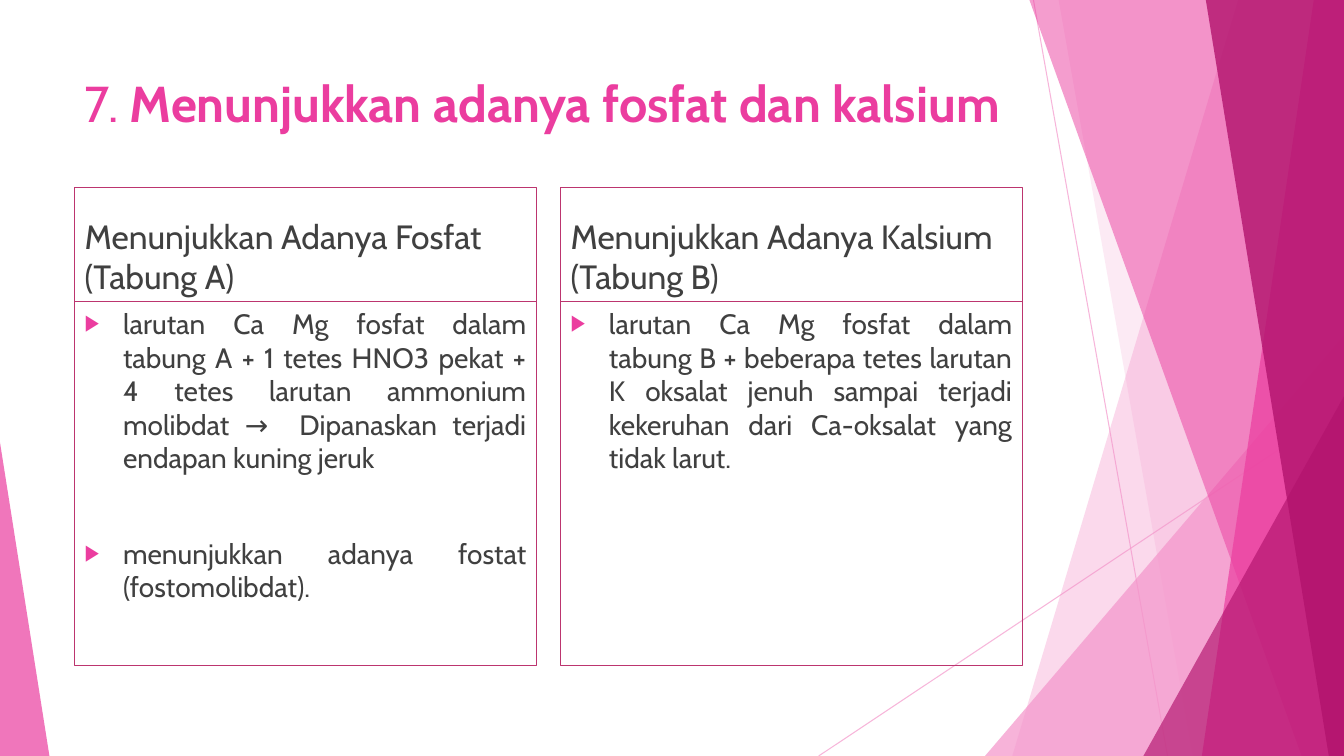
from dataclasses import dataclass

from lxml import etree
from pptx import Presentation
from pptx.dml.color import RGBColor as RGB
from pptx.enum.shapes import MSO_CONNECTOR as Conn, MSO_SHAPE as Shape
from pptx.enum.text import MSO_ANCHOR as Anchor, MSO_AUTO_SIZE as Fit, PP_ALIGN as Align
from pptx.oxml.ns import qn
from pptx.util import Inches, Pt


@dataclass(frozen=True)
class Theme:
    font: str = "Cabin"
    pale: str = "F496CB"
    pink: str = "EB3D9F"
    deep: str = "B2136D"
    edge: str = "BC356F"
    ink: str = "404040"
    title: int = 36
    head: int = 24
    body: int = 20


THEME = Theme()
WIDE, HIGH = 13.33, 7.5

# Slanted bands: top x, bottom x, colour, opacity
BACK = [(12.28, 10.04, THEME.pale, 36), (10.5, 11.83, THEME.pale, 20)]
FRONT = [
    (10.21, 12.91, THEME.pink, 50),
    (13.03, 11.92, THEME.pink, 70),
    (11.96, 13.18, THEME.deep, 80),
]

# Columns: left, heading, items
COLUMNS = [
    (0.74, "Menunjukkan Adanya Fosfat (Tabung A)", [
        "larutan Ca Mg fosfat dalam tabung A + 1 tetes HNO3 pekat + 4 tetes "
        "larutan ammonium molibdat →  Dipanaskan terjadi endapan kuning jeruk",
        "menunjukkan adanya fostat (fostomolibdat).",
    ]),
    (5.56, "Menunjukkan Adanya Kalsium (Tabung B)", [
        "larutan Ca Mg fosfat dalam tabung B + beberapa tetes larutan K oksalat "
        "jenuh sampai terjadi kekeruhan dari Ca-oksalat yang tidak larut.",
    ]),
]


def tint(fill, color, alpha):
    fill.solid()
    fill.fore_color.rgb = RGB.from_string(color)
    node = fill._xPr.find(qn("a:solidFill"))[0]
    etree.SubElement(node, qn("a:alpha")).set("val", str(alpha * 1000))


def paint(shape, color, alpha):
    shape.shadow.inherit = False
    tint(shape.fill, color, alpha)
    shape.line.fill.background()


def add_ray(slide, x1, y1, x2, y2):
    ray = slide.shapes.add_connector(
        Conn.STRAIGHT, Inches(x1), Inches(y1), Inches(x2), Inches(y2))
    ray.line.width = Pt(0.75)
    tint(ray.line.fill, THEME.pale, 70)
    etree.SubElement(ray._element.spPr, qn("a:effectLst"))


def add_band(slide, top, low, color, alpha):
    pen = slide.shapes.build_freeform(Inches(top), 0)
    ends = [(WIDE, 0), (WIDE, HIGH), (low, HIGH)]
    pen.add_line_segments([(Inches(x), Inches(y)) for x, y in ends], close=True)
    paint(pen.convert_to_shape(), color, alpha)


def add_wedge(slide, left, top, width, peak, color, alpha):
    wedge = slide.shapes.add_shape(
        Shape.ISOSCELES_TRIANGLE, Inches(left), Inches(top),
        Inches(width), Inches(HIGH - top))
    wedge.adjustments[0] = peak
    paint(wedge, color, alpha)


def add_decor(slide):
    add_ray(slide, 10.25, 0, 11.58, HIGH)
    add_ray(slide, WIDE, 4.03, 8.12, HIGH)
    for band in BACK:
        add_band(slide, *band)
    add_wedge(slide, 9.77, 3.33, 3.56, 1, THEME.pale, 72)
    for band in FRONT:
        add_band(slide, *band)
    add_wedge(slide, 11.34, 3.93, 1.99, 1, THEME.deep, 66)
    add_wedge(slide, 0, 4.39, 0.49, 0, THEME.pink, 70)


def place(slide, index, left, top, width, height, anchor):
    """Position a placeholder and bring it in front of the decor."""
    box = slide.placeholders[index]
    box.left, box.top = Inches(left), Inches(top)
    box.width, box.height = Inches(width), Inches(height)
    slide.shapes._spTree.append(box._element)
    frame = box.text_frame
    frame.word_wrap = True
    frame.auto_size = Fit.NONE
    frame.vertical_anchor = anchor
    return box


def style(run, size, color, bold=False):
    run.font.name = THEME.font
    run.font.size = Pt(size)
    run.font.bold = bold
    run.font.color.rgb = RGB.from_string(color)


def frame_box(box):
    box.line.color.rgb = RGB.from_string(THEME.edge)
    box.line.width = Pt(0.75)


def bullet(para):
    props = para._p.get_or_add_pPr()
    props.set("marL", str(Inches(0.38)))
    props.set("indent", str(-Inches(0.38)))
    color = etree.SubElement(props, qn("a:buClr"))
    etree.SubElement(color, qn("a:srgbClr")).set("val", THEME.pink)
    etree.SubElement(props, qn("a:buSzPct")).set("val", "80000")
    etree.SubElement(props, qn("a:buChar")).set("char", "▶")


def add_title(slide):
    box = place(slide, 0, 0.74, 0.67, 10.49, 1.44, Anchor.TOP)
    para = box.text_frame.paragraphs[0]
    para.alignment = Align.LEFT
    parts = [("7. ", False), ("Menunjukkan adanya fosfat dan kalsium", True)]
    for text, bold in parts:
        run = para.add_run()
        run.text = text
        style(run, THEME.title, THEME.pink, bold)


def add_head(slide, index, left, text):
    box = place(slide, index, left, 1.86, 4.58, 1.13, Anchor.BOTTOM)
    frame_box(box)
    box.text_frame.text = text
    para = box.text_frame.paragraphs[0]
    para.space_before = Pt(10)
    style(para.runs[0], THEME.head, THEME.ink)


def add_list(slide, index, left, items):
    box = place(slide, index, left, 2.99, 4.58, 3.61, Anchor.TOP)
    frame_box(box)
    box.text_frame.text = "\n".join(items)
    for spot, para in enumerate(box.text_frame.paragraphs):
        para.alignment = Align.JUSTIFY
        para.space_before = Pt(44 if spot else 10)
        bullet(para)
        style(para.runs[0], THEME.body, THEME.ink)


def main():
    deck = Presentation()
    deck.slide_width, deck.slide_height = Inches(WIDE), Inches(HIGH)
    slide = deck.slides.add_slide(deck.slide_layouts.get_by_name("Comparison"))
    add_decor(slide)
    add_title(slide)
    for spot, (left, head, items) in enumerate(COLUMNS):
        add_head(slide, 2 * spot + 1, left, head)
        add_list(slide, 2 * spot + 2, left, items)
    deck.save("out.pptx")


if __name__ == "__main__":
    main()
